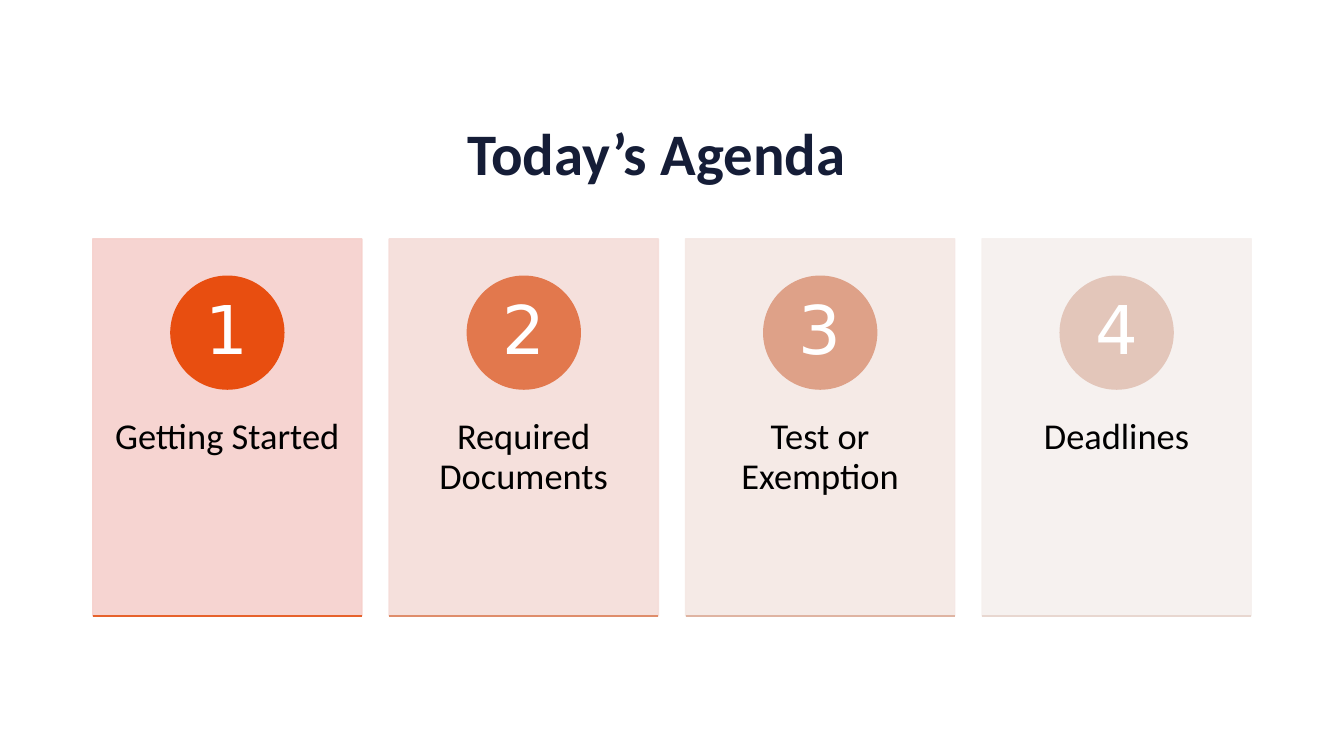
from dataclasses import dataclass

from lxml.etree import SubElement
from pptx import Presentation
from pptx.dml.color import RGBColor
from pptx.enum.shapes import MSO_CONNECTOR, MSO_SHAPE
from pptx.enum.text import MSO_ANCHOR, MSO_AUTO_SIZE, PP_ALIGN
from pptx.oxml.ns import qn
from pptx.shapes.autoshape import Shape
from pptx.slide import Slide
from pptx.text.text import TextFrame
from pptx.util import Inches, Pt

# Column grid, in inches
LEFT, COL_W, GAP = 0.92, 2.67, 0.27
CARD_TOP, CARD_H = 2.37, 3.74
BADGE_TOP, BADGE = 2.74, 1.12
LABEL_TOP, LABEL_H = 3.79, 2.25


@dataclass
class AgendaItem:
    label: str
    card: str
    badge: str
    rule: str


AGENDA = [
    AgendaItem("Getting Started", "F6D0CC", "E84E10", "E7622C"),
    AgendaItem("Required Documents", "F5DDD9", "E2784D", "DF8D6B"),
    AgendaItem("Test or Exemption", "F5E8E4", "DEA188", "DFB4A2"),
    AgendaItem("Deadlines", "F6F0EE", "E3C6BA", "E8D7D0"),
]


def rgb(color: str) -> RGBColor:
    return RGBColor.from_string(color)


def column_left(col: int) -> float:
    return LEFT + col * (COL_W + GAP)


def write(tf: TextFrame, text: str, size: float, font: str, color: str,
          inset: tuple[float, float] = (0, 0), anchor: MSO_ANCHOR = MSO_ANCHOR.TOP,
          bold: bool = False) -> None:
    tf.word_wrap = True
    tf.auto_size = MSO_AUTO_SIZE.NONE
    tf.vertical_anchor = anchor
    tf.margin_left = tf.margin_right = Inches(inset[0])
    tf.margin_top = tf.margin_bottom = Inches(inset[1])
    p = tf.paragraphs[0]
    p.text = text
    p.alignment = PP_ALIGN.CENTER
    p.line_spacing = 0.9
    p.font.size = Pt(size)
    p.font.name = font
    p.font.bold = bold
    p.font.color.rgb = rgb(color)


def add_filled(s: Slide, kind: MSO_SHAPE, x: float, y: float, w: float, h: float,
               color: str, opacity: int = 100) -> Shape:
    sp = s.shapes.add_shape(kind, Inches(x), Inches(y), Inches(w), Inches(h))
    sp.shadow.inherit = False
    sp.fill.solid()
    sp.fill.fore_color.rgb = rgb(color)
    sp.line.color.rgb = rgb(color)
    sp.line.width = Pt(1)
    if opacity < 100:
        for clr in sp.element.spPr.iter(qn("a:srgbClr")):
            SubElement(clr, qn("a:alpha"), val=str(opacity * 1000))
    return sp


def add_rule(s: Slide, x: float, y: float, w: float, color: str) -> None:
    line = s.shapes.add_connector(MSO_CONNECTOR.STRAIGHT, Inches(x), Inches(y),
                                  Inches(x + w), Inches(y))
    line.line.color.rgb = rgb(color)
    line.line.width = Pt(1)
    SubElement(line.element.spPr, qn("a:effectLst"))


def add_agenda_card(s: Slide, col: int, item: AgendaItem) -> None:
    x = column_left(col)
    add_filled(s, MSO_SHAPE.RECTANGLE, x, CARD_TOP, COL_W, CARD_H, item.card, 90)

    label = s.shapes.add_textbox(Inches(x), Inches(LABEL_TOP), Inches(COL_W), Inches(LABEL_H))
    write(label.text_frame, item.label, 26, "Calibri", "000000", (0.21, 0.36))

    badge = add_filled(s, MSO_SHAPE.OVAL, x + (COL_W - BADGE) / 2, BADGE_TOP,
                       BADGE, BADGE, item.badge)
    write(badge.text_frame, str(col + 1), 48, "DejaVu Sans", "FFFFFF",
          (0.09, 0.01), MSO_ANCHOR.MIDDLE)

    add_rule(s, x, CARD_TOP + CARD_H, COL_W, item.rule)


def main() -> None:
    prs = Presentation()
    prs.slide_width, prs.slide_height = Inches(13.33), Inches(7.5)
    s = prs.slides.add_slide(prs.slide_layouts[5])

    # Title
    title = s.shapes.title
    title.left, title.top = Inches(0.76), Inches(1.24)
    title.width, title.height = Inches(11.5), Inches(1.45)
    write(title.text_frame, "Today’s Agenda", 42, "Calibri", "151D37", bold=True)

    # Numbered cards
    for col, item in enumerate(AGENDA):
        add_agenda_card(s, col, item)

    prs.save("out.pptx")


if __name__ == "__main__":
    main()
